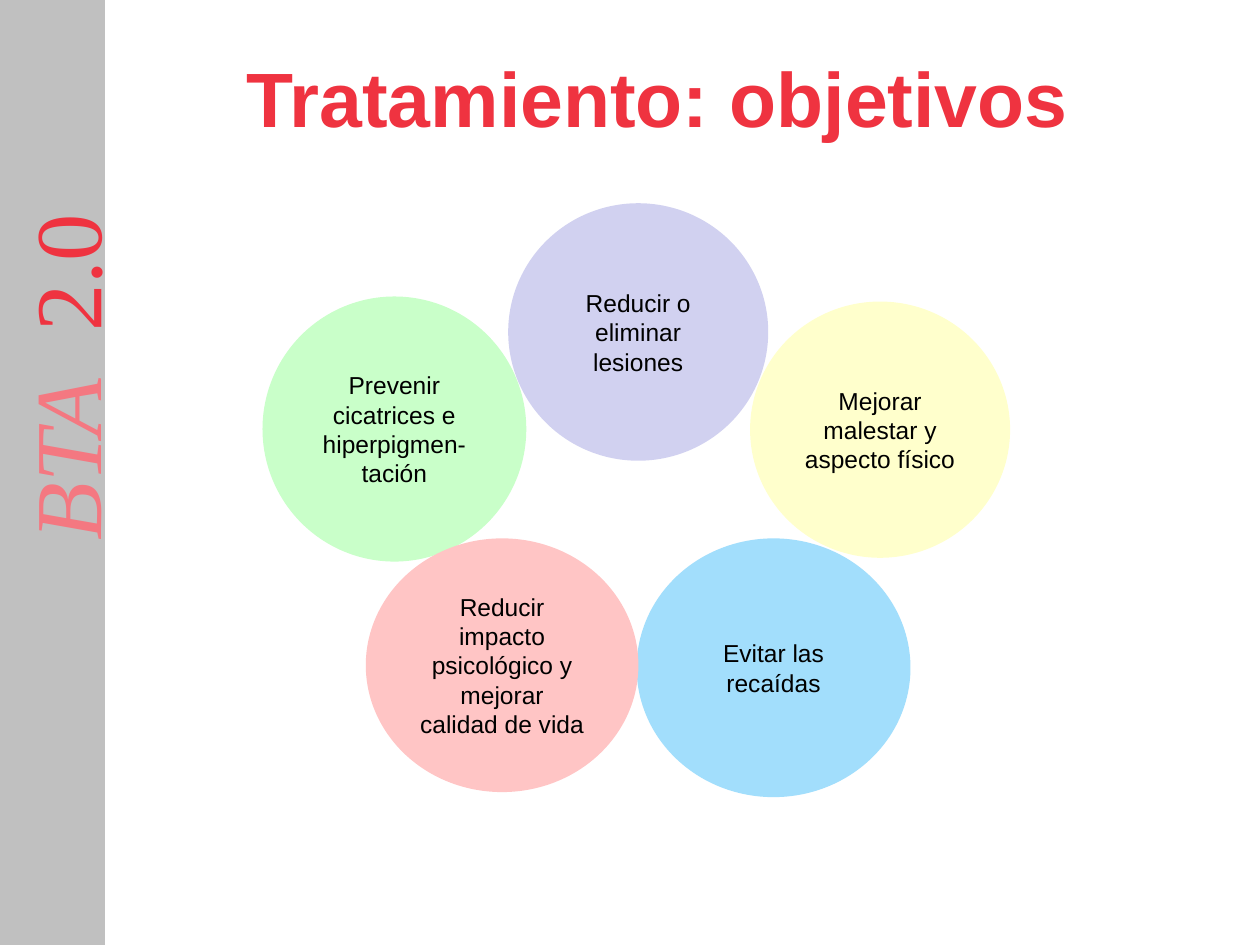
from dataclasses import dataclass

import pptx
import pptx.dml.color
import pptx.enum.shapes
import pptx.enum.text
import pptx.util

Inches = pptx.util.Inches
Shape = pptx.enum.shapes.MSO_SHAPE
Anchor = pptx.enum.text.MSO_ANCHOR
Align = pptx.enum.text.PP_ALIGN


@dataclass(frozen=True)
class Theme:
    sans: str = "Arial"
    serif: str = "Times New Roman"
    red: str = "EF3340"
    pale_red: str = "F47881"
    grey: str = "C0C0C0"
    black: str = "000000"
    title_size: int = 44
    brand_size: int = 54
    goal_size: int = 14


@dataclass(frozen=True)
class Goal:
    left: float
    top: float
    width: float
    height: float
    color: str
    paragraphs: tuple[str, ...]


THEME = Theme()
GOALS = (
    Goal(2.09, 2.36, 2.08, 2.09, "C9FFC9", ("Prevenir cicatrices e hiperpigmen-", "tación")),
    Goal(4.04, 1.62, 2.05, 2.03, "D1D1F0", ("Reducir o eliminar lesiones",)),
    Goal(5.96, 2.40, 2.05, 2.02, "FFFFCC", ("Mejorar malestar y aspecto físico",)),
    Goal(5.06, 4.28, 2.16, 2.04, "A2DEFC", ("Evitar las recaídas",)),
    Goal(2.91, 4.28, 2.15, 2.00, "FFC5C5",
         ("Reducir impacto psicológico y mejorar calidad de vida",)),
)


def rgb(color: str):
    return pptx.dml.color.RGBColor.from_string(color)


def add_span(para, text: str, size: int, color: str, face: str,
             bold: bool = False, italic: bool = False):
    span = para.add_run()
    span.text = text
    font = span.font
    font.name, font.size = face, pptx.util.Pt(size)
    font.bold, font.italic = bold, italic
    font.color.rgb = rgb(color)
    return span


def add_solid(page, kind, left: float, top: float, width: float, height: float,
              color: str, line_width: float):
    """Add a shape whose fill and outline share one colour."""
    shape = page.shapes.add_shape(
        kind, Inches(left), Inches(top), Inches(width), Inches(height))
    shape.shadow.inherit = False
    shape.fill.solid()
    shape.fill.fore_color.rgb = rgb(color)
    shape.line.color.rgb = rgb(color)
    shape.line.width = pptx.util.Pt(line_width)
    return shape


def add_sidebar(page) -> None:
    add_solid(page, Shape.RECTANGLE, 0, 0, 0.83, 7.5, THEME.grey, 0.75)
    box = page.shapes.add_textbox(Inches(-1.11), Inches(2.27), Inches(3.23), Inches(1))
    box.rotation = 270
    frame = box.text_frame
    frame.word_wrap = True
    frame.vertical_anchor = Anchor.BOTTOM
    para = frame.paragraphs[0]
    add_span(para, "BTA", THEME.brand_size, THEME.pale_red, THEME.serif, italic=True)
    gap = add_span(para, " ", THEME.brand_size, THEME.pale_red, THEME.serif, italic=True)
    gap.font._element.set("spc", "1350")  # widens the space by 13.5 points
    add_span(para, "2.0", THEME.brand_size, THEME.red, THEME.serif)


def add_title(page) -> None:
    box = page.shapes.add_textbox(Inches(0.91), Inches(0.29), Inches(8.62), Inches(0.95))
    frame = box.text_frame
    frame.word_wrap = True
    frame.vertical_anchor = Anchor.MIDDLE
    para = frame.paragraphs[0]
    para.alignment = Align.CENTER
    add_span(para, "Tratamiento: objetivos", THEME.title_size, THEME.red, THEME.sans,
             bold=True)


def add_goal(page, goal: Goal) -> None:
    circle = add_solid(page, Shape.FLOWCHART_CONNECTOR, goal.left, goal.top,
                       goal.width, goal.height, goal.color, 1)
    frame = circle.text_frame
    frame.word_wrap = True
    frame.vertical_anchor = Anchor.MIDDLE
    for index, text in enumerate(goal.paragraphs):
        para = frame.add_paragraph() if index else frame.paragraphs[0]
        para.alignment = Align.CENTER
        add_span(para, text, THEME.goal_size, THEME.black, THEME.sans)


def main() -> None:
    deck = pptx.Presentation()
    deck.slide_width, deck.slide_height = Inches(10), Inches(7.5)
    page = deck.slides.add_slide(deck.slide_layouts[6])
    add_sidebar(page)
    add_title(page)
    for goal in GOALS:
        add_goal(page, goal)
    deck.save("out.pptx")


if __name__ == "__main__":
    main()
